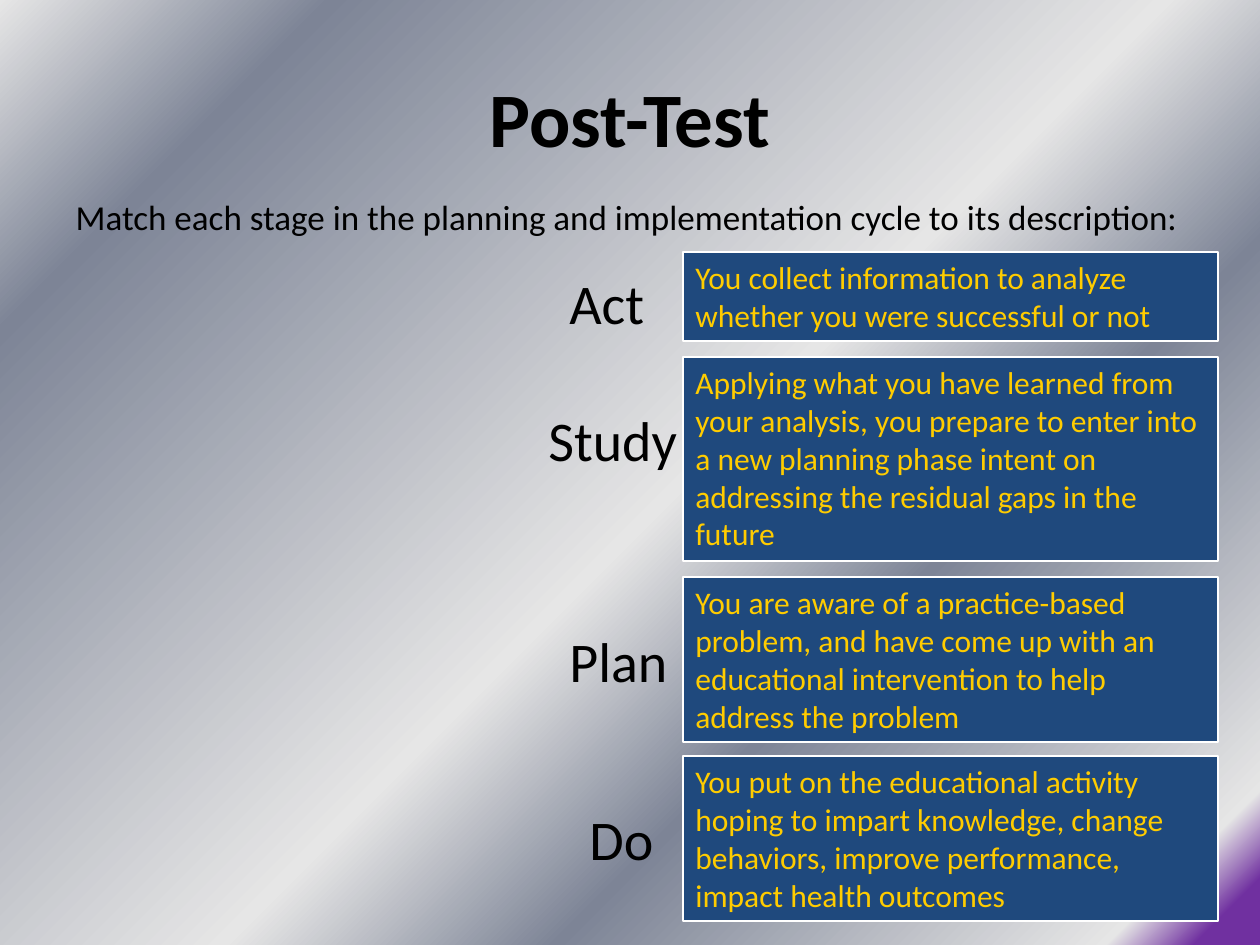
from copy import deepcopy

from pptx import Presentation
from pptx.dml.color import RGBColor
from pptx.enum.shapes import MSO_SHAPE as Shape
from pptx.enum.text import MSO_ANCHOR as Anchor, MSO_AUTO_SIZE as AutoSize, PP_ALIGN as Align
from pptx.oxml.ns import qn
from pptx.util import Pt

BLACK = RGBColor(0x00, 0x00, 0x00)
WHITE = RGBColor(0xFF, 0xFF, 0xFF)
NAVY = RGBColor(0x1F, 0x49, 0x7D)
GOLD = RGBColor(0xFF, 0xCC, 0x00)
PURPLE = RGBColor(0x70, 0x30, 0xA0)
SILVER = RGBColor(0xE6, 0xE6, 0xE6)
STEEL = RGBColor(0x7D, 0x84, 0x96)

TITLE = "Post-Test"
PROMPT = "Match each stage in the planning and implementation cycle to its description:"
STAGES = [
    ("Act", (557, 262, 136)),
    ("Study", (536, 399, 158)),
    ("Plan", (557, 620, 147)),
    ("Do", (577, 798, 116)),
]
DESCRIPTIONS = [
    ("You collect information to analyze whether you were successful or not", 252, 89),
    ("Applying what you have learned from your analysis, you prepare to enter into "
     "a new planning phase intent on addressing the residual gaps in the future", 357, 204),
    ("You are aware of a practice-based problem, and have come up with an "
     "educational intervention to help address the problem", 577, 165),
    ("You put on the educational activity hoping to impart knowledge, change "
     "behaviors, improve performance, impact health outcomes", 756, 165),
]
SHEEN = [(0, PURPLE), (2, PURPLE), (3, PURPLE), (7, SILVER),
         (32, STEEL), (47, SILVER), (85, STEEL), (100, SILVER)]

DESCRIPTION_LEFT, DESCRIPTION_WIDTH = 683, 535
STAGE_HEIGHT = 81
GROWING = {"word_wrap": True, "auto_size": AutoSize.SHAPE_TO_FIT_TEXT,
           "vertical_anchor": Anchor.TOP}


def px(length):
    return round(length * 914400 / 126)


def apply(target, values):
    for name, value in values.items():
        setattr(target, name, value)


def place(part, left, top, width, height):
    apply(part, {"left": px(left), "top": px(top), "width": px(width), "height": px(height)})


def write(part, wording, size, color, align=Align.LEFT, bold=False, frame={}):
    apply(part.text_frame, frame)
    paragraph = part.text_frame.paragraphs[0]
    paragraph.alignment = align
    run = paragraph.add_run()
    run.text = wording
    apply(run.font, {"name": "Calibri", "size": Pt(size), "bold": bold})
    run.font.color.rgb = color
    return paragraph


def paint_background(slide):
    fill = slide.background.fill
    fill.gradient()
    fill.gradient_angle = 135
    stop_list = slide.element.find(".//" + qn("a:gsLst"))
    while len(stop_list) < len(SHEEN):
        stop_list.append(deepcopy(stop_list[0]))
    for stop, (percent, color) in zip(fill.gradient_stops, SHEEN):
        stop.position = percent / 100
        stop.color.rgb = color


def main():
    deck = Presentation()
    apply(deck, {"slide_width": px(1260), "slide_height": px(945)})
    slide = deck.slides.add_slide(deck.slide_layouts[1])
    paint_background(slide)

    title, prompt = slide.placeholders
    place(title, 63, 38, 1134, 157)
    write(title, TITLE, 44, BLACK, Align.CENTER, True, {"vertical_anchor": Anchor.MIDDLE})
    place(prompt, 63, 189, 1144, 73)
    properties = write(prompt, PROMPT, 20, BLACK)._p.get_or_add_pPr()
    for name, indent in {"marL": 48, "indent": -48}.items():
        properties.set(name, str(px(indent)))
    properties.append(properties.makeelement(qn("a:buNone"), {}))

    for wording, top, height in DESCRIPTIONS:
        description = slide.shapes.add_shape(
            Shape.RECTANGLE, px(DESCRIPTION_LEFT), px(top), px(DESCRIPTION_WIDTH), px(height))
        description.shadow.inherit = False
        description.fill.solid()
        description.fill.fore_color.rgb = NAVY
        description.line.color.rgb = WHITE
        description.line.width = Pt(0.75)
        write(description, wording, 18, GOLD, frame=GROWING)

    for wording, (left, top, width) in STAGES:
        stage = slide.shapes.add_textbox(px(left), px(top), px(width), px(STAGE_HEIGHT))
        write(stage, wording, 32, BLACK, frame=GROWING)

    deck.save("out.pptx")


if __name__ == "__main__":
    main()
